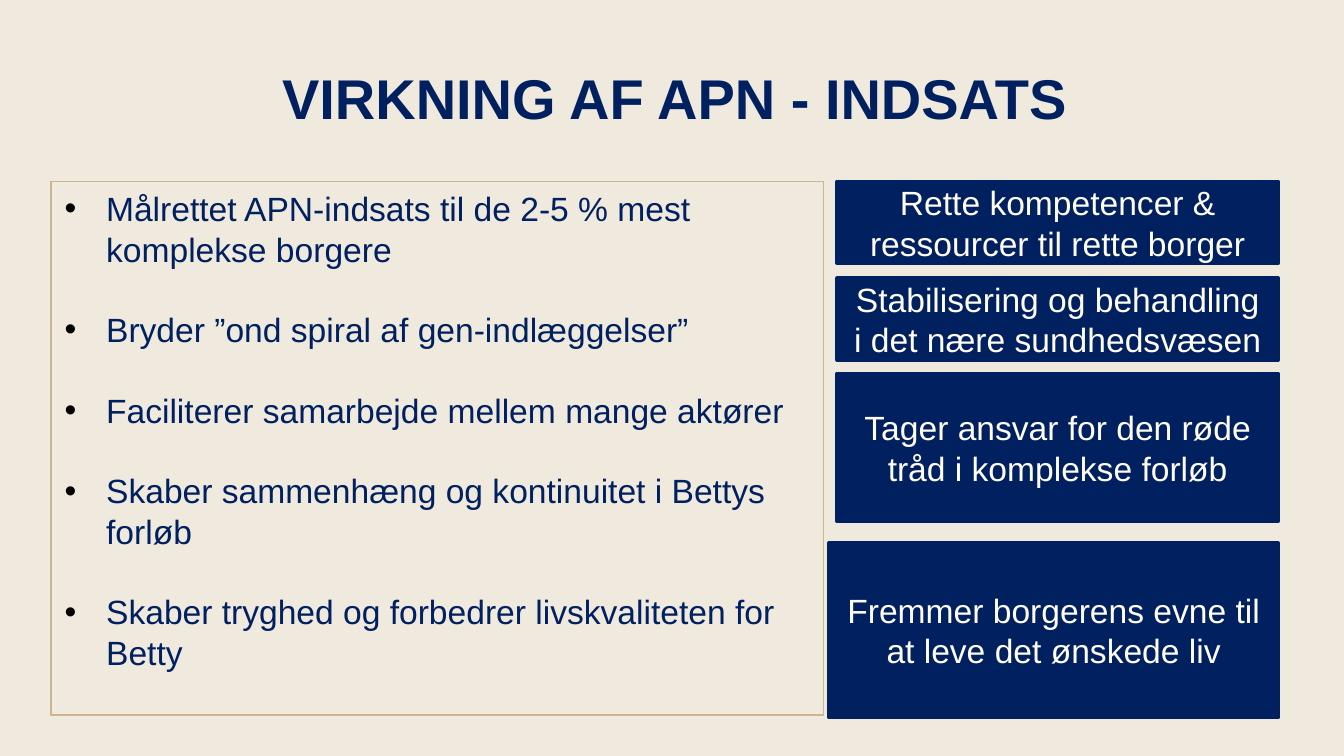
import pptx
import pptx.dml.color
import pptx.enum.shapes
import pptx.enum.text
import pptx.oxml
import pptx.oxml.ns
import pptx.util
from pptx.util import Inches

NAVY, CREAM, SAND, WHITE = "002060", "F0E9DD", "CDB58D", "FFFCF2"
ALIGN = pptx.enum.text.PP_ALIGN
ANCHOR = pptx.enum.text.MSO_ANCHOR
LINE_PITCH = 21.6

POINTS = [
    "Målrettet APN-indsats til de 2-5 % mest komplekse borgere",
    "Bryder ”ond spiral af gen-indlæggelser”",
    "Faciliterer samarbejde mellem mange aktører",
    "Skaber sammenhæng og kontinuitet i Bettys forløb",
    "Skaber tryghed og forbedrer livskvaliteten for Betty",
]

# Effect text, with the box as left, top, width, height
EFFECTS = [
    ("Rette kompetencer & ressourcer til rette borger", (6.23, 1.35, 3.28, 0.61)),
    ("Stabilisering og behandling i det nære sundhedsvæsen", (6.23, 2.07, 3.28, 0.61)),
    ("Tager ansvar for den røde tråd i komplekse forløb", (6.23, 2.78, 3.28, 1.1)),
    ("Fremmer borgerens evne til at leve det ønskede liv", (6.17, 4.04, 3.34, 1.3)),
]


def color(hex_string):
    return pptx.dml.color.RGBColor.from_string(hex_string)


def place(shape, box):
    shape.left, shape.top, shape.width, shape.height = map(Inches, box)


def paint(shape, fill, line, line_width):
    shape.fill.solid()
    shape.fill.fore_color.rgb = color(fill)
    shape.line.color.rgb = color(line)
    shape.line.width = pptx.util.Pt(line_width)


def add_bullet(paragraph, indent):
    properties = paragraph._p.get_or_add_pPr()
    properties.set("marL", str(Inches(indent)))
    properties.set("indent", str(-Inches(indent)))
    namespace = pptx.oxml.ns.nsdecls("a")
    for markup in (
        f'<a:buClr {namespace}><a:srgbClr val="000000"/></a:buClr>',
        f'<a:buFont {namespace} typeface="Arial"/>',
        f'<a:buChar {namespace} char="•"/>',
    ):
        properties.append(pptx.oxml.parse_xml(markup))


def write(frame, texts, size=18, ink=NAVY, bold=False, align=ALIGN.LEFT,
          anchor=ANCHOR.MIDDLE, pitch=None, gap=0, bullet_indent=None):
    """Fill a text frame with one paragraph for each text."""
    frame.word_wrap = True
    frame.auto_size = pptx.enum.text.MSO_AUTO_SIZE.NONE
    frame.vertical_anchor = anchor
    for index, text in enumerate(texts):
        paragraph = frame.add_paragraph() if index else frame.paragraphs[0]
        paragraph.text = text
        if bullet_indent is not None:
            add_bullet(paragraph, bullet_indent)
        paragraph.alignment = align
        paragraph.space_before = pptx.util.Pt(gap if index else 0)
        if pitch:
            paragraph.line_spacing = pptx.util.Pt(pitch)
        font = paragraph.runs[0].font
        font.name, font.size, font.bold = "Arial", pptx.util.Pt(size), bold
        font.color.rgb = color(ink)


def add_title(slide, box):
    title = slide.shapes.title
    place(title, box)
    write(title.text_frame, ["VIRKNING AF APN - INDSATS"], size=30, bold=True,
          align=ALIGN.CENTER)


def add_points(slide, box):
    points = slide.placeholders[1]
    place(points, box)
    paint(points, CREAM, SAND, 0.75)
    # One line of air between the points
    write(points.text_frame, POINTS, anchor=ANCHOR.TOP, pitch=LINE_PITCH,
          gap=LINE_PITCH, bullet_indent=0.31)


def add_effect(slide, text, box):
    effect = slide.shapes.add_shape(
        pptx.enum.shapes.MSO_SHAPE.RECTANGLE, *map(Inches, box))
    effect.shadow.inherit = False
    paint(effect, NAVY, NAVY, 2)
    write(effect.text_frame, [text], ink=WHITE, align=ALIGN.CENTER, pitch=LINE_PITCH)


def main():
    presentation = pptx.Presentation()
    # Widescreen, 16:9
    presentation.slide_width = Inches(10)
    presentation.slide_height = Inches(10) * 9 // 16
    slide = presentation.slides.add_slide(presentation.slide_layouts[1])
    slide.background.fill.solid()
    slide.background.fill.fore_color.rgb = color(CREAM)

    add_title(slide, (0.19, 0.42, 9.66, 0.61))
    add_points(slide, (0.38, 1.35, 5.75, 3.97))
    for text, box in EFFECTS:
        add_effect(slide, text, box)

    presentation.save("out.pptx")


if __name__ == "__main__":
    main()
